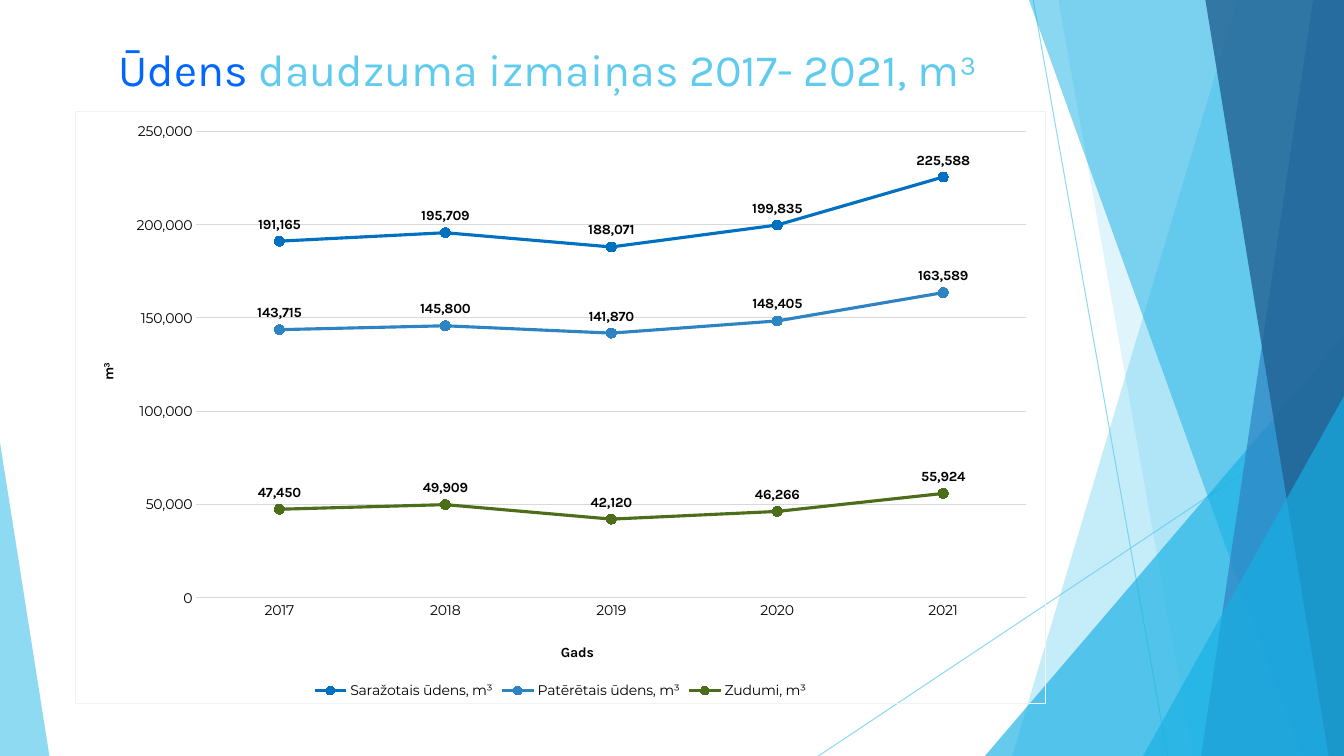
from dataclasses import dataclass

from lxml.etree import SubElement
from pptx import Presentation
from pptx.chart.data import CategoryChartData
from pptx.dml.color import RGBColor
from pptx.enum.chart import XL_CHART_TYPE as ChartType
from pptx.enum.chart import XL_LABEL_POSITION as LabelPos
from pptx.enum.chart import XL_LEGEND_POSITION as LegendPos
from pptx.enum.chart import XL_MARKER_STYLE as Marker
from pptx.enum.chart import XL_TICK_MARK as Tick
from pptx.enum.shapes import MSO_CONNECTOR as Connector
from pptx.enum.shapes import MSO_SHAPE as Shape
from pptx.enum.text import PP_ALIGN as Align
from pptx.oxml import parse_xml
from pptx.oxml.ns import nsdecls, qn
from pptx.util import Pt


@dataclass(frozen=True)
class Theme:
    sky: str = "5FCBEF"
    cyan: str = "17B0E4"
    blue: str = "2E83C3"
    navy: str = "226292"
    accent: str = "0066FF"
    produced: str = "0070C0"
    losses: str = "4C6E1B"
    ink: str = "000000"
    grid: str = "D9D9D9"
    border: str = "F2F2F2"
    heading_font: str = "Karla"
    label_font: str = "Montserrat"
    title_size: float = 32
    chart_size: float = 10
    hairline: float = 0.75
    series_line: float = 2.25


@dataclass(frozen=True)
class Ray:
    start: tuple[float, float]
    end: tuple[float, float]


@dataclass(frozen=True)
class Facet:
    """Band from a slanted left edge to the right side of the slide."""
    top_x: float
    bottom_x: float
    color: str
    opacity: int


@dataclass(frozen=True)
class Corner:
    """Right triangle standing on the bottom of the slide."""
    left: float
    top: float
    width: float
    apex: float
    color: str
    opacity: int


@dataclass(frozen=True)
class Flow:
    name: str
    volumes: tuple[int, ...]
    color: str


THEME = Theme()
WIDTH, HEIGHT = 960, 540

RAYS = (Ray((738, 0), (834, HEIGHT)), Ray((WIDTH, 290), (584.6, HEIGHT)))
BACKDROP = (
    Facet(884, 723, THEME.sky, 36),
    Facet(756, 852, THEME.sky, 20),
    Corner(703.5, 240, 256.5, 1, THEME.cyan, 66),
    Facet(735, 929.5, THEME.cyan, 50),
    Facet(938, 858, THEME.blue, 70),
    Facet(861, 949, THEME.navy, 80),
    Corner(816.5, 283, 143.5, 1, THEME.cyan, 66),
    Corner(0, 316, 35.3, 0, THEME.sky, 70),
)
YEARS = ("2017", "2018", "2019", "2020", "2021")
FLOWS = (
    Flow("Saražotais ūdens, m³", (191165, 195709, 188071, 199835, 225588), THEME.produced),
    Flow("Patērētais ūdens, m³", (143715, 145800, 141870, 148405, 163589), THEME.blue),
    Flow("Zudumi, m³", (47450, 49909, 42120, 46266, 55924), THEME.losses),
)


def rgb(color: str) -> RGBColor:
    return RGBColor.from_string(color)


def set_font(font, *, name: str = THEME.label_font, size: float = THEME.chart_size,
             color: str = THEME.ink, bold: bool = False) -> None:
    font.name, font.size, font.bold = name, Pt(size), bold
    font.color.rgb = rgb(color)


def add_text(paragraph, text: str, **style) -> None:
    run = paragraph.add_run()
    run.text = text
    set_font(run.font, **style)


def set_line(line, color: str, width: float) -> None:
    line.color.rgb = rgb(color)
    line.width = Pt(width)


def set_opacity(element, percent: int) -> None:
    for color in element.spPr.iter(qn("a:srgbClr")):
        SubElement(color, qn("a:alpha"), val=str(percent * 1000))


def set_layout(parent, index: int, **fractions: float) -> None:
    """Place a chart part by fractions of the chart area."""
    old = parent.find(qn("c:layout"))
    if old is not None:
        parent.remove(old)
    target = '<c:layoutTarget val="inner"/>' if "w" in fractions else ""
    values = "".join(f'<c:{key} val="{value}"/>' for key, value in fractions.items())
    parent.insert(index, parse_xml(
        f'<c:layout {nsdecls("c")}><c:manualLayout>{target}<c:xMode val="edge"/>'
        f'<c:yMode val="edge"/>{values}</c:manualLayout></c:layout>'))


def draw_ray(shapes, ray: Ray) -> None:
    line = shapes.add_connector(Connector.STRAIGHT, *map(Pt, ray.start + ray.end))
    set_line(line.line, THEME.sky, THEME.hairline)
    set_opacity(line._element, 70)
    SubElement(line._element.spPr, qn("a:effectLst"))


def draw_backdrop_part(shapes, part: Facet | Corner) -> None:
    if isinstance(part, Facet):
        outline = shapes.build_freeform(Pt(part.top_x), Pt(0))
        corners = ((WIDTH, 0), (WIDTH, HEIGHT), (part.bottom_x, HEIGHT))
        outline.add_line_segments([(Pt(x), Pt(y)) for x, y in corners])
        shape = outline.convert_to_shape()
    else:
        shape = shapes.add_shape(Shape.ISOSCELES_TRIANGLE, Pt(part.left), Pt(part.top),
                                 Pt(part.width), Pt(HEIGHT - part.top))
        shape.adjustments[0] = part.apex
    shape.shadow.inherit = False
    shape.fill.solid()
    shape.fill.fore_color.rgb = rgb(part.color)
    shape.line.fill.background()
    set_opacity(shape._element, part.opacity)


def draw_title(shapes) -> None:
    frame = shapes.add_textbox(Pt(53.3), Pt(26), Pt(676.8), Pt(103.7)).text_frame
    frame.word_wrap = True
    heading = frame.paragraphs[0]
    heading.alignment = Align.CENTER
    for text, color in (("Ūdens", THEME.accent),
                        (" daudzuma izmaiņas 2017- 2021, m³", THEME.sky)):
        add_text(heading, text, name=THEME.heading_font, size=THEME.title_size, color=color)


def style_axis(axis, title: str, x: float, y: float) -> None:
    axis.major_tick_mark = axis.minor_tick_mark = Tick.NONE
    set_font(axis.tick_labels.font)
    add_text(axis.axis_title.text_frame.paragraphs[0], title,
             name=THEME.heading_font, bold=True)
    set_layout(axis.axis_title._element, 1, x=x, y=y)


def draw_chart(shapes) -> None:
    data = CategoryChartData(number_format="#,##0")
    data.categories = YEARS
    for flow in FLOWS:
        data.add_series(flow.name, flow.volumes)
    chart = shapes.add_chart(ChartType.LINE_MARKERS, Pt(53.3), Pt(79.2), Pt(694),
                             Pt(423.4), data).chart
    set_font(chart.font, name=THEME.heading_font)
    chart.has_title = False

    # Transparent chart area with a faint border
    chart._chartSpace.find(qn("c:txPr")).addprevious(parse_xml(
        f'<c:spPr {nsdecls("c", "a")}><a:noFill/><a:ln w="{Pt(THEME.hairline)}"><a:solidFill>'
        f'<a:srgbClr val="{THEME.border}"/></a:solidFill></a:ln></c:spPr>'))
    set_layout(chart._chartSpace.chart.plotArea, 0, x=0.125, y=0.034, w=0.855, h=0.788)

    # Axes
    years, volume = chart.category_axis, chart.value_axis
    style_axis(years, "Gads", 0.498, 0.895)
    style_axis(volume, "m³", 0.022, 0.42)
    set_line(years.format.line, THEME.grid, THEME.hairline)
    volume.minimum_scale, volume.maximum_scale, volume.major_unit = 0, 250000, 50000
    volume.tick_labels.number_format = "#,##0"
    volume.tick_labels.number_format_is_linked = False
    volume.format.line.fill.background()
    set_line(volume.major_gridlines.format.line, THEME.grid, THEME.hairline)
    turned = volume.axis_title._element.find(".//" + qn("a:bodyPr"))
    turned.set("rot", "-5400000")
    turned.set("vert", "horz")

    # Legend
    chart.has_legend = True
    chart.legend.position = LegendPos.BOTTOM
    chart.legend.include_in_layout = False
    set_font(chart.legend.font)

    # Series
    plot = chart.plots[0]
    plot.vary_by_categories = False
    for flow, series in zip(FLOWS, plot.series):
        series.smooth = False
        set_line(series.format.line, flow.color, THEME.series_line)
        series.marker.style, series.marker.size = Marker.CIRCLE, 7
        series.marker.format.fill.solid()
        series.marker.format.fill.fore_color.rgb = rgb(flow.color)
        set_line(series.marker.format.line, flow.color, THEME.hairline)
        labels = series.data_labels
        labels.show_value, labels.position = True, LabelPos.ABOVE
        set_font(labels.font, name=THEME.heading_font, bold=True)


def main() -> None:
    deck = Presentation()
    deck.slide_width, deck.slide_height = Pt(WIDTH), Pt(HEIGHT)
    shapes = deck.slides.add_slide(deck.slide_layouts[6]).shapes
    for ray in RAYS:
        draw_ray(shapes, ray)
    for part in BACKDROP:
        draw_backdrop_part(shapes, part)
    draw_title(shapes)
    draw_chart(shapes)
    deck.save("out.pptx")


if __name__ == "__main__":
    main()
